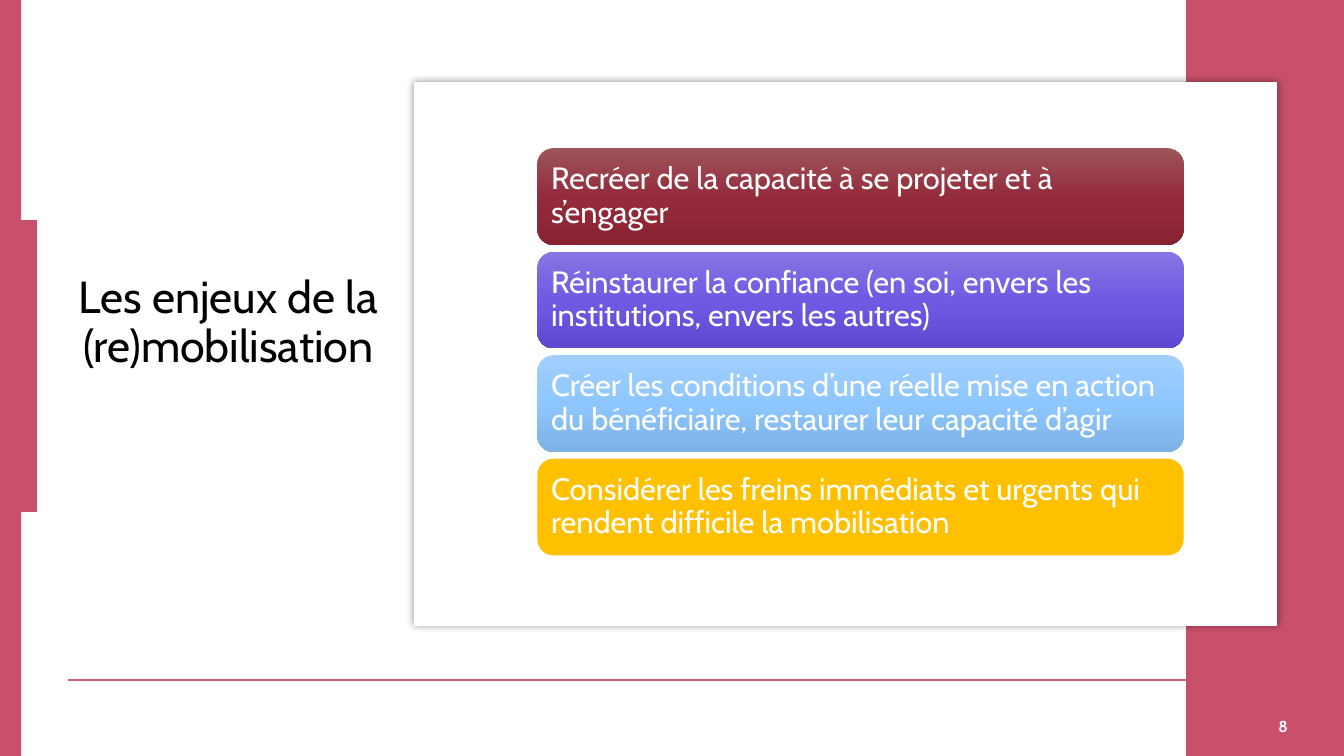
"""Build the slide on the stakes of (re)mobilisation."""
from copy import deepcopy

from lxml import etree
from pptx import Presentation
from pptx.dml.color import RGBColor
from pptx.enum.shapes import MSO_CONNECTOR, MSO_SHAPE
from pptx.enum.text import MSO_ANCHOR, PP_ALIGN
from pptx.oxml import parse_xml
from pptx.oxml.ns import qn
from pptx.util import Inches, Pt

RECT, ROUNDED = MSO_SHAPE.RECTANGLE, MSO_SHAPE.ROUNDED_RECTANGLE
STRAIGHT = MSO_CONNECTOR.STRAIGHT
TOP, MIDDLE, BOTTOM = MSO_ANCHOR.TOP, MSO_ANCHOR.MIDDLE, MSO_ANCHOR.BOTTOM
LEFT, CENTER = PP_ALIGN.LEFT, PP_ALIGN.CENTER

BLACK = RGBColor(0x00, 0x00, 0x00)
WHITE = RGBColor(0xFF, 0xFF, 0xFF)
ROSE = RGBColor(0xC9, 0x50, 0x6B)
RULE = RGBColor(0xC9, 0x63, 0x72)
AMBER = RGBColor(0xFF, 0xC0, 0x00)
WINE = [RGBColor(0x9D, 0x55, 0x5C), RGBColor(0x94, 0x2B, 0x3B), RGBColor(0x88, 0x22, 0x31)]
VIOLET = [RGBColor(0x85, 0x75, 0xE3), RGBColor(0x70, 0x5A, 0xE4), RGBColor(0x5E, 0x48, 0xD2)]
SKY = [RGBColor(0xA0, 0xCF, 0xFE), RGBColor(0x8E, 0xC7, 0xFF), RGBColor(0x7C, 0xB1, 0xE5)]

FONT = "Cabin"
SLIDE_W, SLIDE_H = 13.33, 7.5
TITLE = "Les enjeux de la (re)mobilisation"
PAGE = "8"
STAKES = [
    ("Recréer de la capacité à se projeter et à s’engager", WINE),
    ("Réinstaurer la confiance (en soi, envers les institutions, envers les autres)", VIOLET),
    ("Créer les conditions d’une réelle mise en action du bénéficiaire, "
     "restaurer leur capacité d’agir", SKY),
    ("Considérer les freins immédiats et urgents qui rendent difficile la mobilisation", [AMBER]),
]

BAND_W = 1.56
TAB_TOP, TAB_H = 2.19, 2.88
PANELS = {
    "edge": (0, 0, 0.21, SLIDE_H, ROSE),
    "band": (SLIDE_W - BAND_W, 0, BAND_W, SLIDE_H, ROSE),
    "card": (4.11, 0.82, 8.55, 5.38, WHITE),
    "tab": (0, TAB_TOP, 0.36, TAB_H, ROSE),
}
STAKE_X, STAKE_Y, STAKE_W, STAKE_H = 5.33, 1.47, 6.41, 0.96
STAKE_PITCH = 1.027

SHADOW = (
    '<a:effectLst xmlns:a="http://schemas.openxmlformats.org/drawingml/2006/main">'
    '<a:outerShdw blurRad="63500" dist="0" dir="0" algn="ctr" rotWithShape="0">'
    '<a:srgbClr val="000000"><a:alpha val="40000"/></a:srgbClr>'
    '</a:outerShdw></a:effectLst>'
)


def add_panel(slide, kind, x, y, w, h, colors):
    sp = slide.shapes.add_shape(kind, Inches(x), Inches(y), Inches(w), Inches(h))
    sp.shadow.inherit = False
    sp.line.fill.background()
    if len(colors) == 1:
        sp.fill.solid()
        sp.fill.fore_color.rgb = colors[0]
        return sp
    sp.fill.gradient()
    sp.fill.gradient_angle = 270
    stops = next(sp._element.spPr.iter(qn("a:gsLst")))
    for _ in range(len(colors) - len(stops)):
        stops.append(deepcopy(stops[-1]))
    for i, (stop, color) in enumerate(zip(sp.fill.gradient_stops, colors)):
        stop.position = i / (len(colors) - 1)
        stop.color.rgb = color
    return sp


def write(sp, text, size, color, align, anchor, spacing=1.0, bold=False):
    tf = sp.text_frame
    tf.word_wrap = True
    tf.vertical_anchor = anchor
    p = tf.paragraphs[0]
    p.alignment = align
    p.line_spacing = spacing
    r = p.add_run()
    r.text = text
    r.font.name, r.font.size, r.font.bold = FONT, Pt(size), bold
    r.font.color.rgb = color
    return tf


def add_label(slide, x, y, w, h, *style, **options):
    sp = slide.shapes.add_textbox(Inches(x), Inches(y), Inches(w), Inches(h))
    return write(sp, *style, **options)


def main():
    prs = Presentation()
    prs.slide_width, prs.slide_height = Inches(SLIDE_W), Inches(SLIDE_H)
    slide = prs.slides.add_slide(prs.slide_layouts[6])

    rule = slide.shapes.add_connector(
        STRAIGHT, Inches(0.67), Inches(6.75), Inches(12.67), Inches(6.75))
    rule.line.color.rgb, rule.line.width = RULE, Pt(1.5)
    etree.SubElement(rule._element.spPr, qn("a:effectLst"))

    for name, (x, y, w, h, color) in PANELS.items():
        sp = add_panel(slide, RECT, x, y, w, h, [color])
        if name != "edge":
            sp.line.color.rgb, sp.line.width = color, Pt(1)
        if name == "card":
            spPr = sp._element.spPr
            spPr.replace(spPr.find(qn("a:effectLst")), parse_xml(SHADOW))

    tf = add_label(slide, 0.64, TAB_TOP, 3.25, TAB_H,
                   TITLE, 32, BLACK, CENTER, TOP, spacing=0.9)
    tf.margin_top = Inches(0.54)
    add_label(slide, 12.12, 6.95, 1.21, 0.4, PAGE, 11.3, WHITE, CENTER, BOTTOM, bold=True)

    for i, (text, colors) in enumerate(STAKES):
        sp = add_panel(slide, ROUNDED, STAKE_X, STAKE_Y + i * STAKE_PITCH,
                       STAKE_W, STAKE_H, colors)
        tf = write(sp, text, 22, WHITE, LEFT, MIDDLE, spacing=0.9)
        tf.margin_left = tf.margin_right = tf.margin_top = tf.margin_bottom = Inches(0.09)

    prs.save("out.pptx")


if __name__ == "__main__":
    main()
